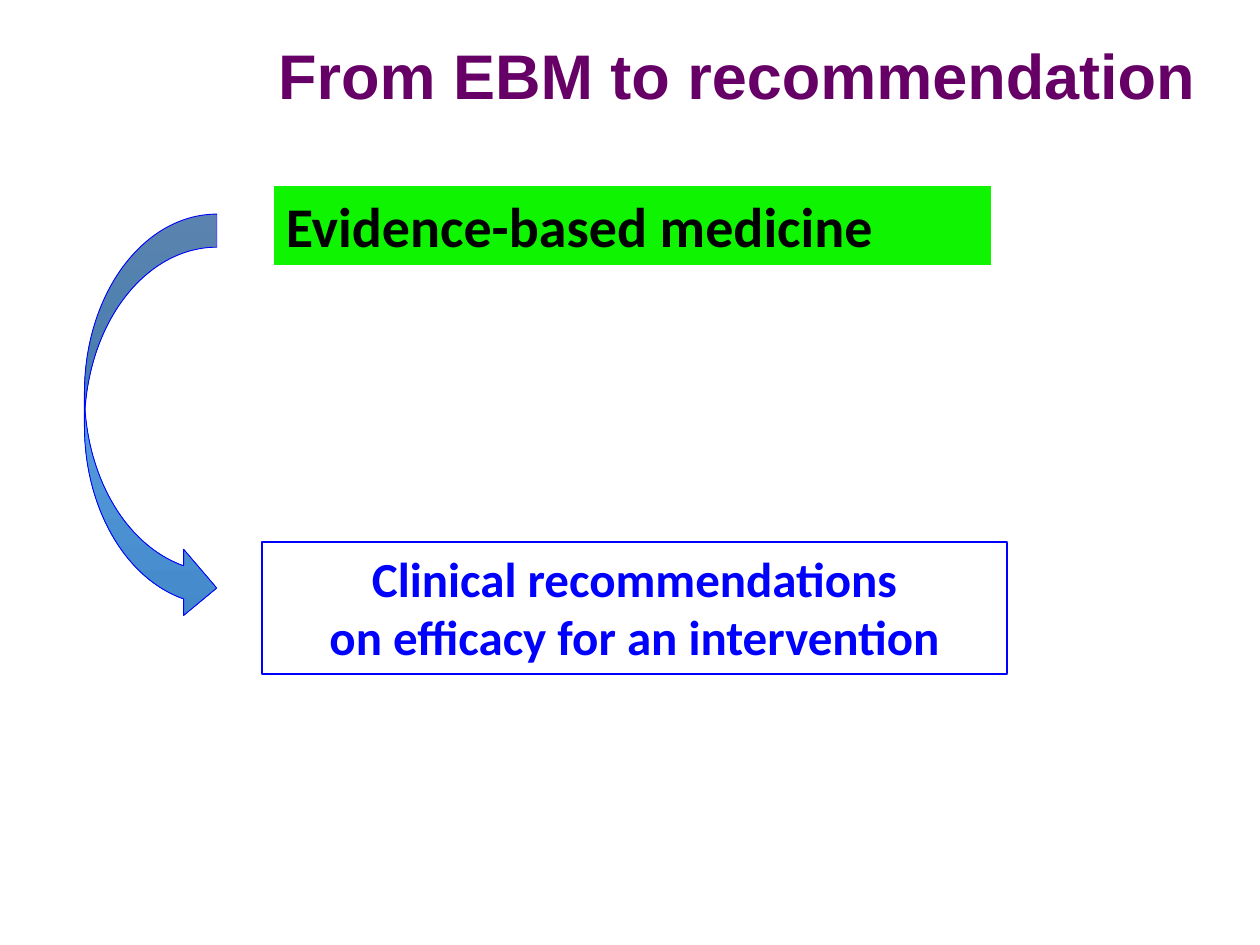
from lxml import etree
from pptx import Presentation
from pptx.dml.color import RGBColor
from pptx.enum import shapes, text
from pptx.oxml import ns
from pptx.util import Inches, Pt

PURPLE = RGBColor(0x66, 0x00, 0x66)
GREEN = RGBColor(0x0F, 0xF4, 0x00)
BLUE = RGBColor(0x00, 0x00, 0xFF)
BLACK = RGBColor(0x00, 0x00, 0x00)
WHITE = RGBColor(0xFF, 0xFF, 0xFF)
ARROW_STOPS = [
    (0, RGBColor(0x71, 0xA6, 0xDB)),
    (50, RGBColor(0x55, 0x9B, 0xDB)),
    (100, RGBColor(0x44, 0x8A, 0xCA)),
]


def add_text(page, place, lines, size, color, font="Calibri",
             align=text.PP_ALIGN.LEFT, fill=None, line=None):
    box = page.shapes.add_textbox(*map(Inches, place))
    if fill is not None:
        box.fill.solid()
        box.fill.fore_color.rgb = fill
    if line is not None:
        box.line.color.rgb = line
        box.line.width = Pt(1)
    frame = box.text_frame
    frame.word_wrap = True
    for index, words in enumerate(lines):
        para = frame.add_paragraph() if index else frame.paragraphs[0]
        para.alignment = align
        span = para.add_run()
        span.text = words
        span.font.name = font
        span.font.size = Pt(size)
        span.font.bold = True
        span.font.color.rgb = color


def set_gradient(shape, stops):
    shape.fill.gradient()
    shape.fill.gradient_angle = 270
    stop_list = shape._element.spPr.find(".//" + ns.qn("a:gsLst"))
    for stop in list(stop_list):
        stop_list.remove(stop)
    for percent, color in stops:
        stop = etree.SubElement(stop_list, ns.qn("a:gs"), pos=str(percent * 1000))
        etree.SubElement(stop, ns.qn("a:srgbClr"), val=str(color))


def add_curved_arrow(page, place):
    arrow = page.shapes.add_shape(
        shapes.MSO_SHAPE.CURVED_RIGHT_ARROW, *map(Inches, place))
    arrow.shadow.inherit = False
    set_gradient(arrow, ARROW_STOPS)
    arrow.line.color.rgb = BLUE
    arrow.line.width = Pt(0.5)


def main():
    deck = Presentation()
    deck.slide_width, deck.slide_height = Inches(10), Inches(7.5)
    page = deck.slides.add_slide(deck.slide_layouts[6])
    add_text(page, (2.11, 0.24, 7.55, 0.71), ["From EBM to recommendation"],
             36, PURPLE, font="Arial")
    add_text(page, (2.17, 1.47, 5.7, 0.64), ["Evidence-based medicine"],
             32, BLACK, fill=GREEN, line=WHITE)
    add_text(page, (2.08, 4.3, 5.91, 1.05),
             ["Clinical recommendations", "on efficacy for an intervention"],
             28, BLUE, align=text.PP_ALIGN.CENTER, line=BLUE)
    add_curved_arrow(page, (0.67, 1.7, 1.05, 3.23))
    deck.save("out.pptx")


if __name__ == "__main__":
    main()
